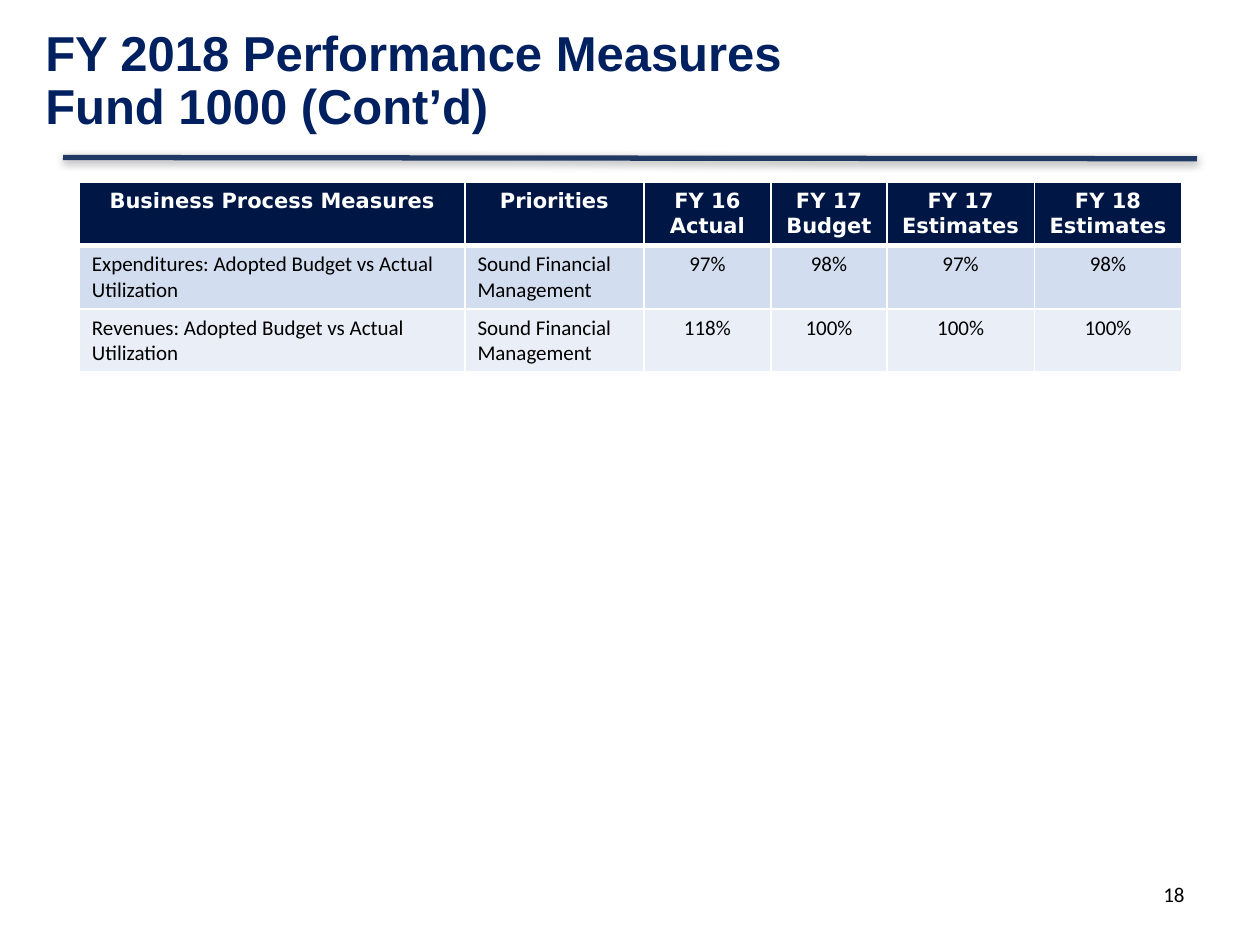
from lxml import etree
from pptx import Presentation
from pptx.dml.color import RGBColor
from pptx.enum.shapes import MSO_CONNECTOR
from pptx.enum.text import MSO_ANCHOR, PP_ALIGN
from pptx.oxml import parse_xml
from pptx.oxml.ns import nsdecls, qn
from pptx.util import Inches, Pt

TITLE = "FY 2018 Performance Measures\vFund 1000 (Cont’d)"
PAGE_NUMBER = "18"
HEADER = ["Business Process Measures", "Priorities", "FY 16\nActual",
          "FY 17\nBudget", "FY 17\nEstimates", "FY 18\nEstimates"]
MEASURES = [
    ["Expenditures: Adopted Budget vs Actual Utilization",
     "Sound Financial Management", "97%", "98%", "97%", "98%"],
    ["Revenues: Adopted Budget vs Actual Utilization",
     "Sound Financial Management", "118%", "100%", "100%", "100%"],
]
COL_WIDTHS = [3.06, 1.42, 1.01, 0.92, 1.17, 1.17]
ROW_HEIGHTS = [0.49, 0.5, 0.5]
TEXT_COLS = 2  # leading columns that hold words rather than figures

THEME = {
    "title": ("Arial", 28, True, "002060"),
    "header": ("DejaVu Sans", 12, True, "FFFFFF"),
    "body": ("Calibri", 12, False, "000000"),
    "rule": "203864",
    "header_fill": "001746",
    "bands": ["D2DEEF", "EAEFF7"],
    "grid": "FFFFFF",
}


def style_paragraph(p, style, align):
    name, size, bold, color = THEME[style]
    p.alignment = align
    p.font.name, p.font.size, p.font.bold = name, Pt(size), bold
    p.font.color.rgb = RGBColor.from_string(color)


def add_text(slide, box, text, style, align=PP_ALIGN.LEFT):
    sp = slide.shapes.add_textbox(*map(Inches, box))
    tf = sp.text_frame
    tf.word_wrap = True
    tf.text = text
    for p in tf.paragraphs:
        style_paragraph(p, style, align)
    return tf


def add_rule(slide):
    """Draw the line under the title, with its soft shadow."""
    line = slide.shapes.add_connector(
        MSO_CONNECTOR.STRAIGHT, *map(Inches, (0.5, 1.25, 9.5, 1.26)))
    line.line.color.rgb = RGBColor.from_string(THEME["rule"])
    line.line.width = Pt(3)
    line._element.spPr.append(parse_xml(
        f'<a:effectLst {nsdecls("a")}><a:outerShdw blurRad="{Pt(5)}" '
        f'dist="{Pt(1.6)}" dir="5400000" rotWithShape="0"><a:srgbClr val="000000">'
        '<a:alpha val="38000"/></a:srgbClr></a:outerShdw></a:effectLst>'))


def set_borders(cell, widths):
    """Set cell borders; widths maps L, R, T, B, in that order, to points."""
    tc_pr = cell._tc.get_or_add_tcPr()
    for side, width in widths.items():
        ln = etree.SubElement(tc_pr, qn(f"a:ln{side}"), w=str(Pt(width)))
        fill = etree.SubElement(ln, qn("a:solidFill"))
        etree.SubElement(fill, qn("a:srgbClr"), val=THEME["grid"])


def add_measures_table(slide):
    rows = [HEADER] + MEASURES
    table = slide.shapes.add_table(
        len(rows), len(HEADER), Inches(0.63), Inches(1.45),
        Inches(sum(COL_WIDTHS)), Inches(sum(ROW_HEIGHTS))).table
    for col, width in zip(table.columns, COL_WIDTHS):
        col.width = Inches(width)
    for row, height in zip(table.rows, ROW_HEIGHTS):
        row.height = Inches(height)
    fills = [THEME["header_fill"]] + THEME["bands"]
    for i, (values, fill) in enumerate(zip(rows, fills)):
        style = "header" if i == 0 else "body"
        for j, value in enumerate(values):
            cell = table.cell(i, j)
            set_borders(cell, {"L": 1, "R": 1, "T": 3 if i == 1 else 1,
                               "B": 3 if i == 0 else 1})
            cell.fill.solid()
            cell.fill.fore_color.rgb = RGBColor.from_string(fill)
            cell.text = value
            is_words = i > 0 and j < TEXT_COLS
            for p in cell.text_frame.paragraphs:
                style_paragraph(p, style, PP_ALIGN.LEFT if is_words else PP_ALIGN.CENTER)


def main():
    prs = Presentation()
    prs.slide_width, prs.slide_height = Inches(10), Inches(7.5)
    slide = prs.slides.add_slide(prs.slide_layouts[6])
    add_rule(slide)
    title = add_text(slide, (0.36, 0.2, 6.86, 0.9), TITLE, "title")
    title.margin_left = title.margin_right = title.margin_top = title.margin_bottom = 0
    title.vertical_anchor = MSO_ANCHOR.MIDDLE
    title.paragraphs[0].line_spacing = 0.9
    add_measures_table(slide)
    add_text(slide, (7.17, 6.95, 2.33, 0.4), PAGE_NUMBER, "body", PP_ALIGN.RIGHT)
    prs.save("out.pptx")


if __name__ == "__main__":
    main()
